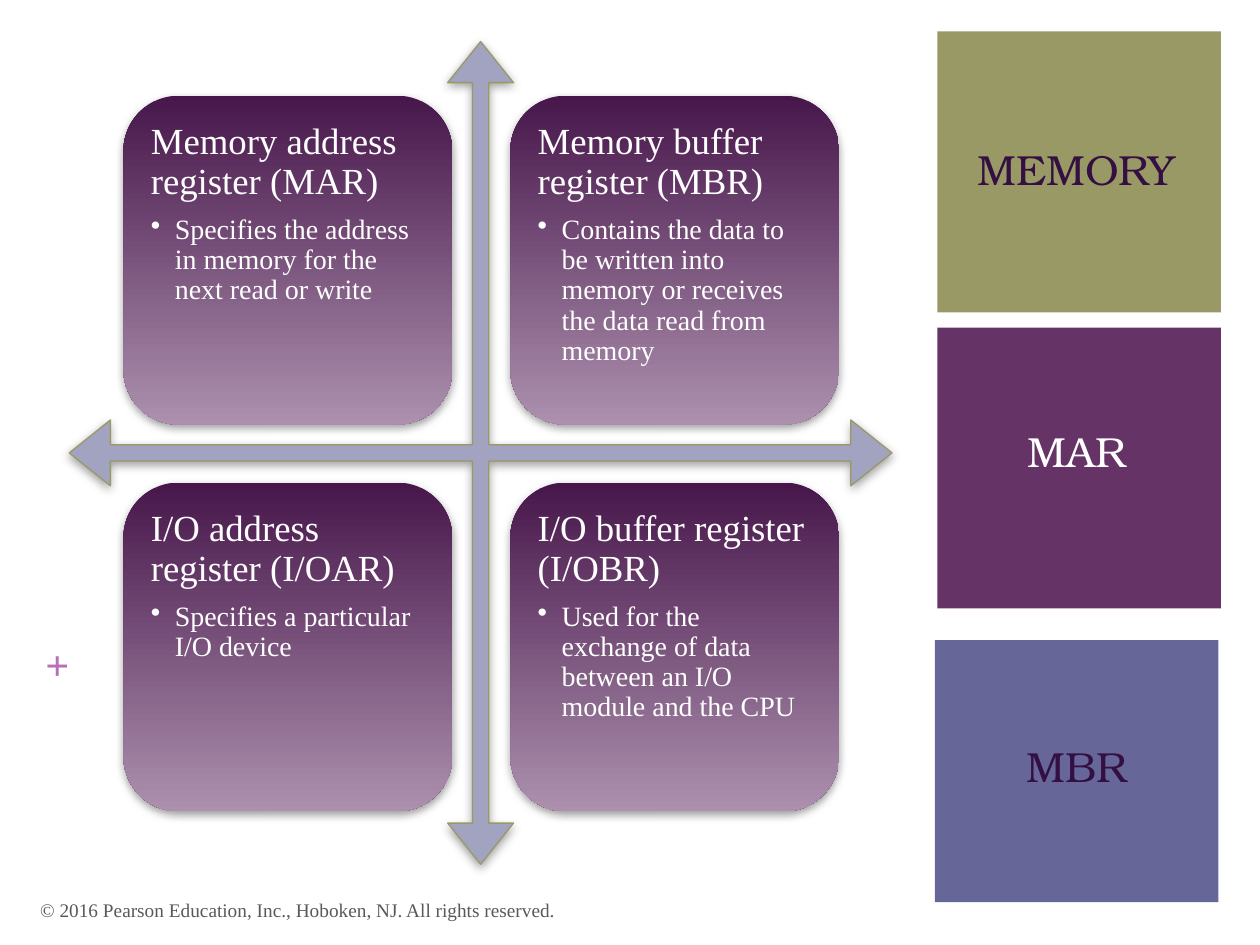
from lxml.etree import SubElement
from pptx import Presentation
from pptx.dml.color import RGBColor
from pptx.enum.shapes import MSO_SHAPE as Shape
from pptx.enum.text import MSO_ANCHOR as Anchor, PP_ALIGN as Align
from pptx.oxml.ns import qn
from pptx.util import Inches, Pt

SERIF, DISPLAY = "Times New Roman", "TeX Gyre Bonum"
color = RGBColor.from_string


def style_text(paragraph, text, size, hex_color, font=SERIF, align=Align.LEFT):
    paragraph.text = text
    paragraph.alignment = align
    paragraph.font.size = Pt(size)
    paragraph.font.name = font
    paragraph.font.color.rgb = color(hex_color)


def add_shadow(shape):
    shape.shadow.inherit = False
    effects = shape.element.spPr.find(qn("a:effectLst"))
    shadow = SubElement(effects, qn("a:outerShdw"), blurRad=str(Pt(5)),
                        dist=str(Pt(2)), dir="5400000", rotWithShape="0")
    gray = SubElement(shadow, qn("a:srgbClr"), val="808080")
    SubElement(gray, qn("a:alpha"), val="75000")


presentation = Presentation()
presentation.slide_width, presentation.slide_height = Inches(10), Inches(7.5)
slide = presentation.slides.add_slide(presentation.slide_layouts[5])
shapes = slide.shapes

# Coloured blocks in the right column
column_left, column_width = Inches(7.42), Inches(2.25)
for left, top, height, fill in [
    (7.44, 0.25, 2.23, "999966"),
    (7.44, 2.6, 2.23, "663366"),
    (7.42, 5.08, 2.08, "666699"),
]:
    block = shapes.add_shape(Shape.RECTANGLE, Inches(left), Inches(top),
                             column_width, Inches(height))
    block.shadow.inherit = False
    block.fill.solid()
    block.fill.fore_color.rgb = color(fill)
    block.line.fill.background()

# Title, in front of the first block
title = shapes.title
title.left, title.top = column_left, Inches(0.67)
title.width, title.height = column_width, Inches(0.92)
title.text_frame.vertical_anchor = Anchor.BOTTOM
style_text(title.text_frame.paragraphs[0], "MEMORY", 24, "330F42", DISPLAY, Align.CENTER)
title.element.getparent().append(title.element)

# Labels of the other two blocks
for text, top, text_color in [("MAR", 3.33, "FFFFFF"), ("MBR", 5.83, "330F42")]:
    label = shapes.add_textbox(column_left, Inches(top), column_width, Inches(0.5))
    label.text_frame.word_wrap = True
    style_text(label.text_frame.paragraphs[0], text, 24, text_color, DISPLAY, Align.CENTER)

# Four-way arrow
arrow = shapes.add_shape(Shape.QUAD_ARROW, Inches(0.55), Inches(0.33),
                         Inches(6.53), Inches(6.53))
for index, share in enumerate((0.02, 0.04, 0.05)):
    arrow.adjustments[index] = share
arrow.fill.solid()
arrow.fill.fore_color.rgb = color("A2A2C1")
arrow.line.color.rgb = color("999966")
arrow.line.width = Pt(0.75)
add_shadow(arrow)

# Register cards on a two by two grid
grid_left, grid_top, card_size, step = 0.98, 0.76, 2.61, 3.07
registers = [
    ("Memory address register (MAR)",
     "Specifies the address in memory for the next read or write"),
    ("Memory buffer register (MBR)",
     "Contains the data to be written into memory or receives the data read from memory"),
    ("I/O address register (I/OAR)",
     "Specifies a particular I/O device"),
    ("I/O buffer register (I/OBR)",
     "Used for the exchange of data between an I/O module and the CPU"),
]
for index, (name, purpose) in enumerate(registers):
    row, column = divmod(index, 2)
    card = shapes.add_shape(
        Shape.ROUNDED_RECTANGLE, Inches(grid_left + column * step),
        Inches(grid_top + row * step), Inches(card_size), Inches(card_size))
    card.adjustments[0] = 0.167
    card.fill.gradient()
    card.fill.gradient_angle = 270
    for stop, shade in zip(card.fill.gradient_stops, ("47174B", "AC90AE")):
        stop.color.rgb = color(shade)
    card.line.fill.background()
    add_shadow(card)

    frame = card.text_frame
    frame.word_wrap = True
    frame.vertical_anchor = Anchor.TOP
    frame.margin_left = frame.margin_right = Inches(0.09)
    frame.margin_top = frame.margin_bottom = Inches(0.09)
    heading, detail = frame.paragraphs[0], frame.add_paragraph()
    properties = detail._p.get_or_add_pPr()
    properties.set("marL", str(Inches(0.19)))
    properties.set("indent", str(-Inches(0.19)))
    bullet_color = SubElement(properties, qn("a:buClr"))
    SubElement(bullet_color, qn("a:srgbClr"), val="FFFFFF")
    SubElement(properties, qn("a:buChar"), char="•")
    style_text(heading, name, 21, "FFFFFF")
    style_text(detail, purpose, 16, "FFFFFF")
    heading.line_spacing = detail.line_spacing = 0.9
    detail.level = 1
    detail.space_before = Pt(7.3)

# Plus sign at the left edge
plus = shapes.add_textbox(Inches(0.36), Inches(5.07), Inches(0.24), Inches(0.4))
frame = plus.text_frame
frame.margin_left = frame.margin_right = frame.margin_top = frame.margin_bottom = 0
style_text(frame.paragraphs[0], "+", 24, "B86EB8")
frame.paragraphs[0].font.bold = True

# Copyright line
footer = shapes.add_textbox(Inches(0.22), Inches(7.02), Inches(6.7), Inches(0.4))
footer.text_frame.word_wrap = True
footer.text_frame.vertical_anchor = Anchor.MIDDLE
style_text(footer.text_frame.paragraphs[0],
           "© 2016 Pearson Education, Inc., Hoboken, NJ. All rights reserved.", 11, "595959")

presentation.save("out.pptx")
